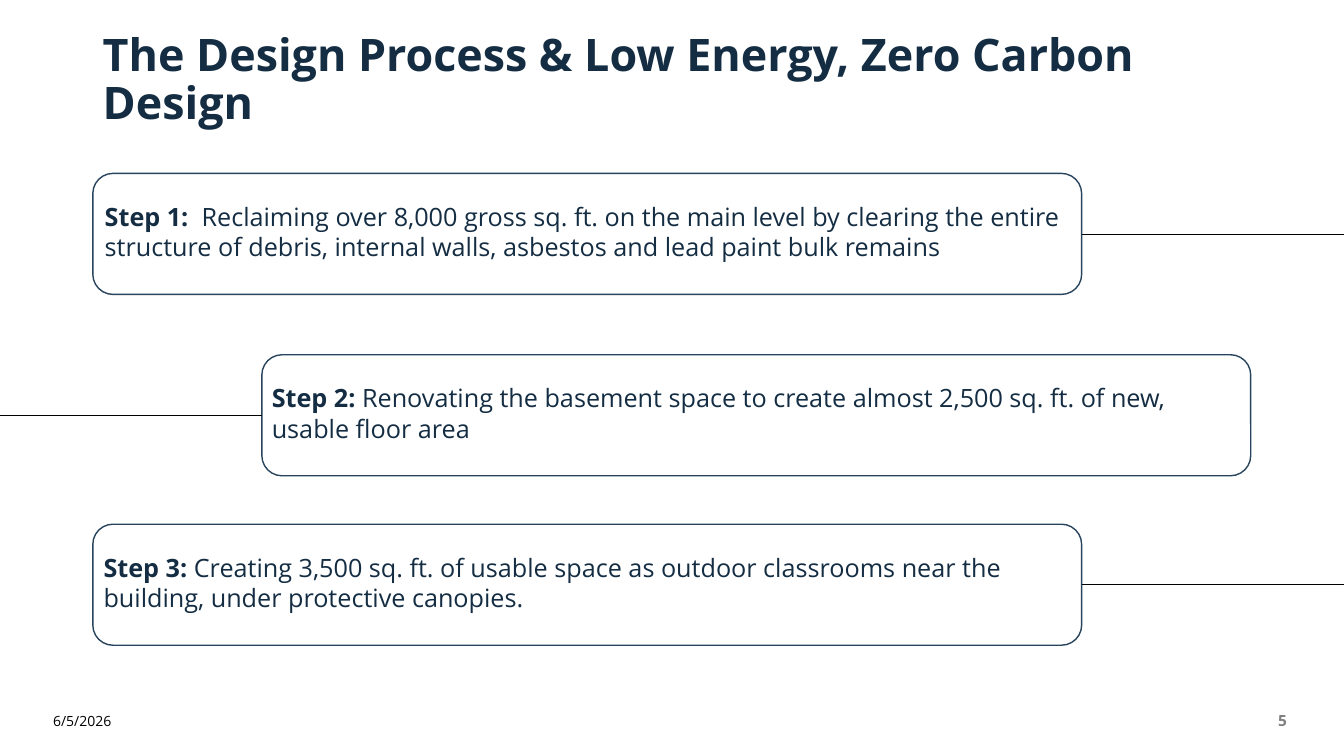
from dataclasses import dataclass

from lxml.etree import SubElement
from pptx import Presentation
from pptx.dml.color import RGBColor
from pptx.enum.shapes import MSO_CONNECTOR, MSO_SHAPE
from pptx.enum.text import MSO_ANCHOR, PP_ALIGN
from pptx.oxml.ns import qn
from pptx.slide import Slide
from pptx.text.text import _Paragraph as Paragraph
from pptx.util import Cm, Pt

COLOURS = {
    "navy": "142D43",
    "outline": "28445D",
    "black": "000000",
    "grey": "808080",
}
FONT = "Open Sans"
SLIDE_WIDTH, SLIDE_HEIGHT = 33.87, 19.05
STEP_WIDTH, STEP_HEIGHT = 24.92, 3.05
TEXT_DROP, TEXT_HEIGHT = 0.58, 1.8
LEFT_SIDE, RIGHT_SIDE = 1, 3


@dataclass
class Span:
    text: str
    size: float
    colour: str = "navy"
    bold: bool = False


@dataclass
class Label:
    left: float
    top: float
    width: float
    height: float
    spans: list[Span]
    anchor: MSO_ANCHOR = MSO_ANCHOR.MIDDLE
    align: PP_ALIGN = PP_ALIGN.LEFT
    line_spacing: float = 1.0


@dataclass
class Step:
    heading: str
    body: str
    left: float
    top: float
    text_left: float
    side: int


LABELS = [
    Label(2.34, 1.02, 29.21, 2.03,
          [Span("The Design Process & Low Energy, Zero Carbon Design", 32, bold=True)],
          line_spacing=0.9),
    Label(1.09, 17.65, 2.59, 1.02, [Span("6/5/2026", 10, "black")]),
    Label(30.78, 17.65, 1.9, 1.02, [Span("5", 11, "grey", True)], align=PP_ALIGN.RIGHT),
]

STEPS = [
    Step("Step 1:  ",
         "Reclaiming over 8,000 gross sq. ft. on the main level by clearing the entire "
         "structure of debris, internal walls, asbestos and lead paint bulk remains",
         2.34, 4.37, 2.39, RIGHT_SIDE),
    Step("Step 2: ",
         "Renovating the basement space to create almost 2,500 sq. ft. of new, "
         "usable floor area",
         6.6, 8.94, 6.6, LEFT_SIDE),
    Step("Step 3: ",
         "Creating 3,500 sq. ft. of usable space as outdoor classrooms near the "
         "building, under protective canopies.",
         2.34, 13.21, 2.36, RIGHT_SIDE),
]


def colour(name: str) -> RGBColor:
    return RGBColor.from_string(COLOURS[name])


def add_span(paragraph: Paragraph, span: Span) -> None:
    run = paragraph.add_run()
    run.text = span.text
    run.font.name = FONT
    run.font.size = Pt(span.size)
    run.font.bold = span.bold
    run.font.color.rgb = colour(span.colour)


def add_label(page: Slide, label: Label) -> None:
    box = page.shapes.add_textbox(
        Cm(label.left), Cm(label.top), Cm(label.width), Cm(label.height))
    frame = box.text_frame
    frame.word_wrap = True
    frame.vertical_anchor = label.anchor
    paragraph = frame.paragraphs[0]
    paragraph.alignment = label.align
    paragraph.line_spacing = label.line_spacing
    for span in label.spans:
        add_span(paragraph, span)


def add_step(page: Slide, step: Step) -> None:
    box = page.shapes.add_shape(
        MSO_SHAPE.ROUNDED_RECTANGLE,
        Cm(step.left), Cm(step.top), Cm(STEP_WIDTH), Cm(STEP_HEIGHT))
    box.shadow.inherit = False
    box.fill.background()
    box.line.color.rgb = colour("outline")
    box.line.width = Pt(1)

    edge = Cm(SLIDE_WIDTH) if step.side == RIGHT_SIDE else Cm(0)
    middle = Cm(step.top + STEP_HEIGHT / 2)
    line = page.shapes.add_connector(MSO_CONNECTOR.STRAIGHT, edge, middle, edge, middle)
    line.begin_connect(box, step.side)
    line.line.color.rgb = colour("black")
    line.line.width = Pt(0.5)
    SubElement(line._element.spPr, qn("a:effectLst"))

    add_label(page, Label(
        step.text_left, step.top + TEXT_DROP, STEP_WIDTH, TEXT_HEIGHT,
        [Span(step.heading, 18, bold=True), Span(step.body, 18)],
        anchor=MSO_ANCHOR.TOP))


def main() -> None:
    deck = Presentation()
    deck.slide_width, deck.slide_height = Cm(SLIDE_WIDTH), Cm(SLIDE_HEIGHT)
    page = deck.slides.add_slide(deck.slide_layouts[6])
    for label in LABELS:
        add_label(page, label)
    for step in STEPS:
        add_step(page, step)
    deck.save("out.pptx")


if __name__ == "__main__":
    main()
